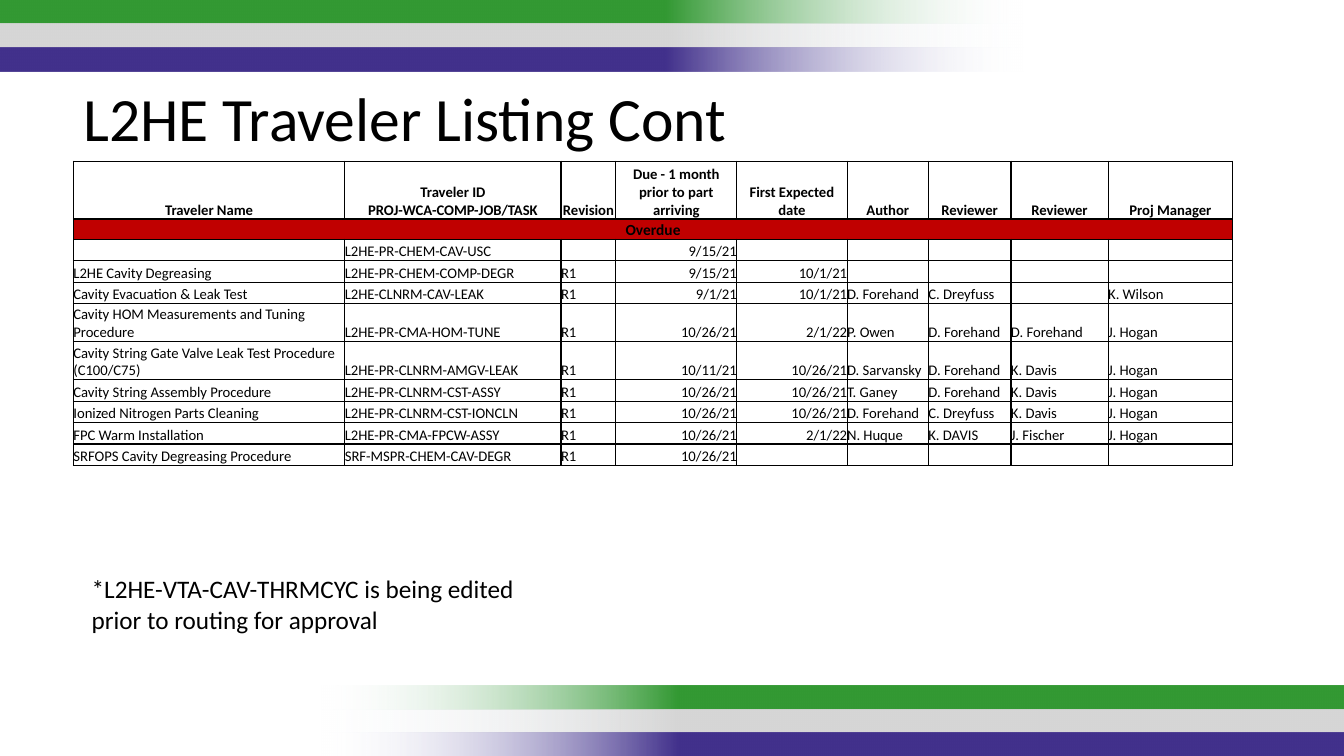
from pptx import Presentation
from pptx.dml.color import RGBColor
from pptx.enum.shapes import MSO_SHAPE
from pptx.enum.text import MSO_ANCHOR, MSO_AUTO_SIZE, PP_ALIGN
from pptx.oxml import parse_xml
from pptx.oxml.ns import nsdecls
from pptx.util import Cm, Pt

RECT = MSO_SHAPE.RECTANGLE
BOTTOM = MSO_ANCHOR.BOTTOM
GROW = MSO_AUTO_SIZE.SHAPE_TO_FIT_TEXT
LEFT, CENTER, RIGHT = PP_ALIGN.LEFT, PP_ALIGN.CENTER, PP_ALIGN.RIGHT

FONT = "Calibri"
BLACK, RED, FADE = "000000", "C00000", "F7FAFD"
STRIPES = ["339933", "D6D6D6", "42318C"]

HEADERS = ["Traveler Name", "Traveler ID\nPROJ-WCA-COMP-JOB/TASK", "Revision",
           "Due - 1 month prior to part arriving", "First Expected date",
           "Author", "Reviewer", "Reviewer", "Proj Manager"]
TRAVELERS = [
    ["", "L2HE-PR-CHEM-CAV-USC", "", "9/15/21", "", "", "", "", ""],
    ["L2HE Cavity Degreasing", "L2HE-PR-CHEM-COMP-DEGR", "R1",
     "9/15/21", "10/1/21", "", "", "", ""],
    ["Cavity Evacuation & Leak Test", "L2HE-CLNRM-CAV-LEAK", "R1",
     "9/1/21", "10/1/21", "D. Forehand", "C. Dreyfuss", "", "K. Wilson"],
    ["Cavity HOM Measurements and Tuning Procedure", "L2HE-PR-CMA-HOM-TUNE", "R1",
     "10/26/21", "2/1/22", "P. Owen", "D. Forehand", "D. Forehand", "J. Hogan"],
    ["Cavity String Gate Valve Leak Test Procedure (C100/C75)",
     "L2HE-PR-CLNRM-AMGV-LEAK", "R1",
     "10/11/21", "10/26/21", "D. Sarvansky", "D. Forehand", "K. Davis", "J. Hogan"],
    ["Cavity String Assembly Procedure", "L2HE-PR-CLNRM-CST-ASSY", "R1",
     "10/26/21", "10/26/21", "T. Ganey", "D. Forehand", "K. Davis", "J. Hogan"],
    ["Ionized Nitrogen Parts Cleaning", "L2HE-PR-CLNRM-CST-IONCLN", "R1",
     "10/26/21", "10/26/21", "D. Forehand", "C. Dreyfuss", "K. Davis", "J. Hogan"],
    ["FPC Warm Installation", "L2HE-PR-CMA-FPCW-ASSY", "R1",
     "10/26/21", "2/1/22", "N. Huque", "K. DAVIS", "J. Fischer", "J. Hogan"],
    ["SRFOPS Cavity Degreasing Procedure", "SRF-MSPR-CHEM-CAV-DEGR", "R1",
     "10/26/21", "", "", "", "", ""],
]
COL_WIDTHS = [6.84, 5.45, 1.38, 3.05, 2.78, 2.05, 2.08, 2.45, 3.14]
DATE_COLS = (3, 4)
HEADER_H, BANNER_H, ROW_H, TALL_ROW_H = 1.46, 0.51, 0.54, 0.96
WRAP_LENGTH = 40  # names longer than this take two lines


def rgb(value):
    return RGBColor.from_string(value)


def write(tf, text, size=10.5, color=BLACK, bold=False, align=LEFT):
    p = tf.paragraphs[0]
    p.alignment = align
    p.font.size = Pt(size)
    for i, line in enumerate(text.split("\n")):
        if i:
            p.add_line_break()
        if line:
            r = p.add_run()
            r.text = line
            r.font.name, r.font.size, r.font.bold = FONT, Pt(size), bold
            r.font.color.rgb = rgb(color)
    if not text:
        # Keeps an empty cell from growing its row
        p._p.append(parse_xml(f'<a:endParaRPr {nsdecls("a")} sz="{int(size * 100)}"/>'))


def add_stripes(s, left, top, width, height, rotation=0):
    """Three stacked bars that fade out at one end."""
    bar_h = height / len(STRIPES)
    for i, color in enumerate(STRIPES):
        sp = s.shapes.add_shape(RECT, Cm(left), Cm(top + i * bar_h), Cm(width), Cm(bar_h))
        sp.rotation = rotation
        sp.shadow.inherit = False
        sp.line.fill.background()
        sp.element.spPr.find("{*}prstGeom").addnext(parse_xml(
            f'<a:gradFill {nsdecls("a")} rotWithShape="1"><a:gsLst>'
            f'<a:gs pos="0"><a:srgbClr val="{FADE}"><a:alpha val="0"/></a:srgbClr></a:gs>'
            f'<a:gs pos="35000"><a:srgbClr val="{color}"/></a:gs>'
            f'<a:gs pos="100000"><a:srgbClr val="{color}"/></a:gs>'
            '</a:gsLst><a:lin ang="0" scaled="0"/></a:gradFill>'))


def add_text(s, left, top, width, height, text, **fmt):
    tf = s.shapes.add_textbox(Cm(left), Cm(top), Cm(width), Cm(height)).text_frame
    tf.word_wrap = True
    tf.auto_size = GROW
    write(tf, text, **fmt)


def style_cell(cell, fill=None, margin=0):
    cell.vertical_anchor = BOTTOM
    cell.margin_left = cell.margin_right = cell.margin_top = Cm(margin)
    cell.margin_bottom = 0
    tc_pr = cell._tc.get_or_add_tcPr()
    for side in "LRTB":
        tc_pr.append(parse_xml(
            f'<a:ln{side} {nsdecls("a")} w="{Pt(1)}"><a:solidFill>'
            f'<a:srgbClr val="{BLACK}"/></a:solidFill></a:ln{side}>'))
    if fill:
        cell.fill.solid()
        cell.fill.fore_color.rgb = rgb(fill)
    else:
        cell.fill.background()


def add_traveler_table(s, left, top):
    heights = [HEADER_H, BANNER_H] + [
        TALL_ROW_H if len(row[0]) > WRAP_LENGTH else ROW_H for row in TRAVELERS]
    table = s.shapes.add_table(len(heights), len(COL_WIDTHS), Cm(left), Cm(top),
                               Cm(sum(COL_WIDTHS)), Cm(sum(heights))).table
    for col, width in zip(table.columns, COL_WIDTHS):
        col.width = Cm(width)
    for row, height in zip(table.rows, heights):
        row.height = Cm(height)

    # Header and overdue banner
    banner = ["Overdue"] + [""] * (len(COL_WIDTHS) - 1)
    for c, (header, label) in enumerate(zip(HEADERS, banner)):
        style_cell(table.cell(0, c), margin=0.02)
        write(table.cell(0, c).text_frame, header, bold=True, align=CENTER)
        style_cell(table.cell(1, c), RED, margin=0.02)
        write(table.cell(1, c).text_frame, label, size=11, bold=True, align=CENTER)
    table.cell(1, 0).merge(table.cell(1, len(COL_WIDTHS) - 1))

    # Travelers
    for r, row in enumerate(TRAVELERS, 2):
        for c, text in enumerate(row):
            style_cell(table.cell(r, c))
            write(table.cell(r, c).text_frame, text,
                  align=RIGHT if c in DATE_COLS else LEFT)


def main():
    prs = Presentation()
    prs.slide_width, prs.slide_height = Cm(33.87), Cm(19.05)
    s = prs.slides.add_slide(prs.slide_layouts[6])
    add_stripes(s, -0.03, 0, 25.83, 1.8, rotation=180)
    add_stripes(s, 8.07, 17.27, 25.83, 1.8)
    add_traveler_table(s, 1.85, 4.06)
    add_text(s, 1.85, 1.9, 26.19, 2.13, "L2HE Traveler Listing Cont", size=44)
    add_text(s, 2.06, 14.33, 12.12, 1.8,
             "*L2HE-VTA-CAV-THRMCYC is being edited prior to routing for approval", size=18)
    prs.save("out.pptx")


if __name__ == "__main__":
    main()
